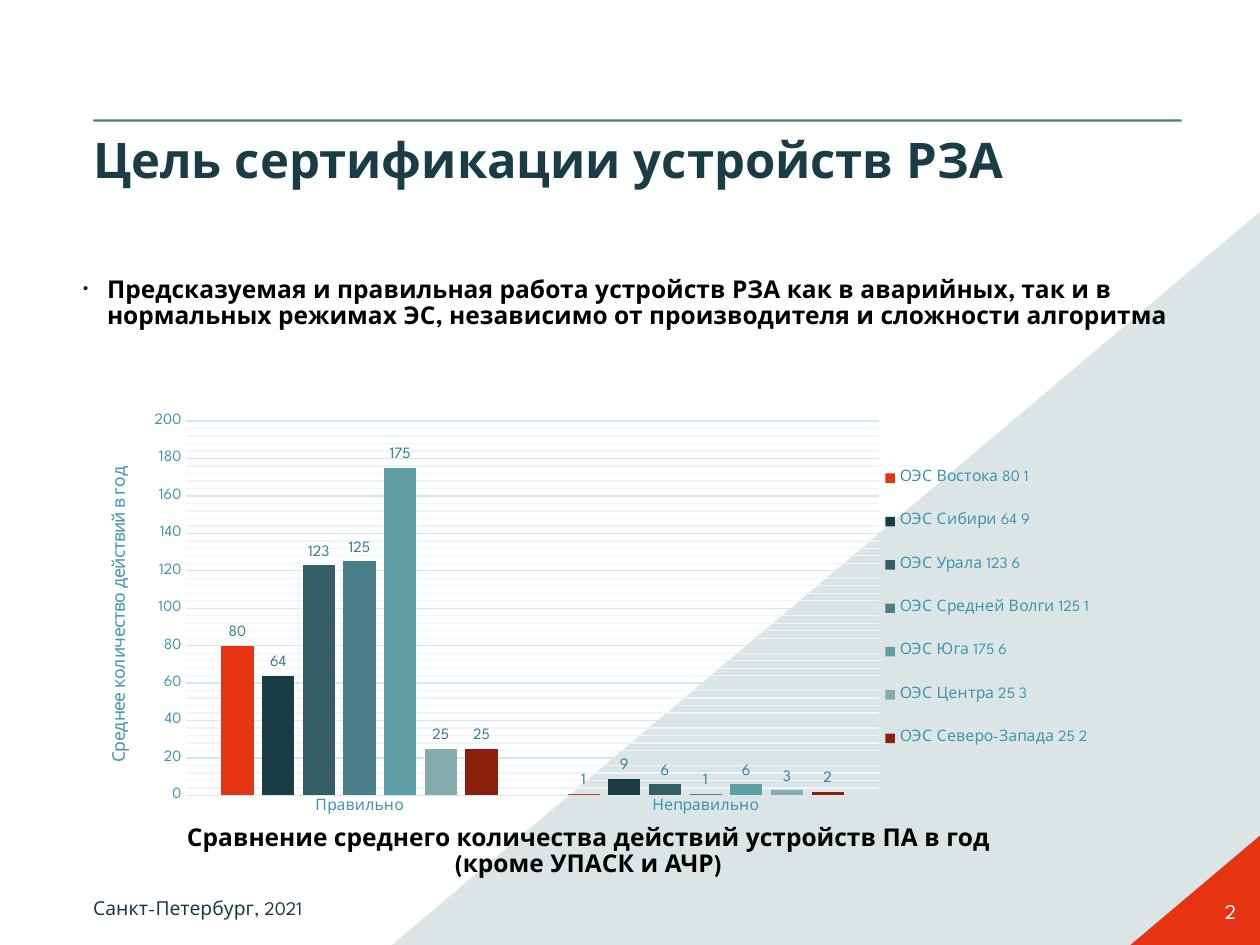
from lxml import etree
from pptx import Presentation
from pptx import util as u
from pptx.chart import data as chart_data
from pptx.dml.color import RGBColor
from pptx.enum import chart as ch, shapes, text
from pptx.oxml import ns

FONT = "League Spartan"
BLACK = RGBColor(0x00, 0x00, 0x00)
WHITE = RGBColor(0xFF, 0xFF, 0xFF)
NAVY = RGBColor(0x1A, 0x3C, 0x47)
TEAL = RGBColor(0x4B, 0x7F, 0x87)
RED = RGBColor(0xE6, 0x33, 0x12)
PALE = RGBColor(0xDC, 0xE5, 0xE5)
AXIS = RGBColor(0x41, 0x95, 0xB1)
LABEL = RGBColor(0x36, 0x7C, 0x93)
GRID = RGBColor(0xD2, 0xE7, 0xEE)
MINOR_GRID = RGBColor(0xED, 0xF5, 0xF8)

CATEGORIES = ["Правильно", "Неправильно"]
SERIES = [
    ("ОЭС Востока", 80, 1, RED),
    ("ОЭС Сибири", 64, 9, NAVY),
    ("ОЭС Урала", 123, 6, RGBColor(0x36, 0x5E, 0x67)),
    ("ОЭС Средней Волги", 125, 1, TEAL),
    ("ОЭС Юга", 175, 6, RGBColor(0x5E, 0x9F, 0xA5)),
    ("ОЭС Центра", 25, 3, RGBColor(0x86, 0xAB, 0xAD)),
    ("ОЭС Северо-Запада", 25, 2, RGBColor(0x8A, 0x1F, 0x0B)),
]


def points(*values):
    return [u.Pt(value) for value in values]


def style_font(font, size, color, bold=False):
    font.name, font.size, font.bold = FONT, u.Pt(size), bold
    font.color.rgb = color


def add_block(page, kind, place, color, flip=False):
    block = page.shapes.add_shape(kind, *points(*place))
    block.shadow.inherit = False
    block.fill.solid()
    block.fill.fore_color.rgb = color
    block.line.fill.background()
    if flip:
        block._element.spPr.xfrm.set("flipH", "1")


def fill_text(box, place, words, size, color, bold=False,
              align=text.PP_ALIGN.LEFT, spacing=0.9, anchor=text.MSO_ANCHOR.TOP):
    box.left, box.top, box.width, box.height = points(*place)
    frame = box.text_frame
    frame.margin_left = frame.margin_right = frame.margin_top = frame.margin_bottom = 0
    frame.word_wrap = True
    frame.auto_size = text.MSO_AUTO_SIZE.NONE
    frame.vertical_anchor = anchor
    para = frame.paragraphs[0]
    para.text = words
    para.alignment, para.line_spacing = align, spacing
    para.space_before = u.Pt(0)
    for span in para.runs:
        style_font(span.font, size, color, bold)
    return para


def add_text(page, place, *args, **options):
    box = page.shapes.add_textbox(*points(*place))
    return fill_text(box, place, *args, **options)


def add_bullet(para, indent):
    props = para._p.get_or_add_pPr()
    props.set("marL", str(u.Pt(indent)))
    props.set("indent", str(-u.Pt(indent)))
    for tag, name, value in (("buSzPct", "val", "60000"),
                             ("buFont", "typeface", "Arial"),
                             ("buChar", "char", "•")):
        etree.SubElement(props, ns.qn("a:" + tag)).set(name, value)


def set_layout(part, x, y, w, h, inner=False):
    """Place a chart part by fractions of the chart area."""
    layout = part.find(ns.qn("c:layout"))
    if layout is None:
        layout = etree.Element(ns.qn("c:layout"))
        part.insert(1 if part.tag == ns.qn("c:legend") else 0, layout)
    manual = etree.SubElement(layout, ns.qn("c:manualLayout"))
    values = [("layoutTarget", "inner")] if inner else []
    values += [("xMode", "edge"), ("yMode", "edge"),
               ("x", x), ("y", y), ("w", w), ("h", h)]
    for tag, value in values:
        etree.SubElement(manual, ns.qn("c:" + tag)).set("val", str(value))


def color_minor_gridlines(axis, color):
    axis.has_minor_gridlines = True
    node = axis._element.find(ns.qn("c:minorGridlines"))
    for tag in ("c:spPr", "a:ln", "a:solidFill", "a:srgbClr"):
        node = etree.SubElement(node, ns.qn(tag))
        if tag == "a:ln":
            node.set("w", str(u.Pt(0.75)))
    node.set("val", str(color))


def style_axes(chart):
    category, value = chart.category_axis, chart.value_axis
    for axis in (category, value):
        axis.major_tick_mark = axis.minor_tick_mark = ch.XL_TICK_MARK.NONE
        style_font(axis.tick_labels.font, 9, AXIS)
    value.has_major_gridlines = True
    for line in (category.format.line, value.major_gridlines.format.line):
        line.color.rgb = GRID
        line.width = u.Pt(0.75)
    color_minor_gridlines(value, MINOR_GRID)
    value.format.line.fill.background()
    value.minimum_scale, value.maximum_scale = 0, 200
    value.major_unit, value.minor_unit = 20, 4
    para = value.axis_title.text_frame.paragraphs[0]
    para.text = "Среднее количество действий в год"
    style_font(para.runs[0].font, 10, AXIS)


def add_column_chart(page, place):
    source = chart_data.CategoryChartData()
    source.categories = CATEGORIES
    for name, right, wrong, _ in SERIES:
        source.add_series(f"{name} {right} {wrong}", (right, wrong))
    chart = page.shapes.add_chart(
        ch.XL_CHART_TYPE.COLUMN_CLUSTERED, *points(*place), source).chart
    chart.has_title = False
    style_font(chart.font, 10, NAVY)
    style_axes(chart)

    # Columns and their value labels
    plot = chart.plots[0]
    plot.gap_width, plot.overlap, plot.vary_by_categories = 219, -27, False
    for series, (*_, color) in zip(plot.series, SERIES):
        series.format.fill.solid()
        series.format.fill.fore_color.rgb = color
        labels = series.data_labels
        labels.show_value = True
        labels.position = ch.XL_LABEL_POSITION.OUTSIDE_END
        style_font(labels.font, 9, LABEL)

    # Legend beside the plot area
    chart.has_legend = True
    legend = chart.legend
    legend.position = ch.XL_LEGEND_POSITION.RIGHT
    legend.include_in_layout = False
    style_font(legend.font, 9, AXIS)
    set_layout(legend._element, 0.75, 0.09, 0.25, 0.79)
    set_layout(chart._chartSpace.chart.plotArea, 0.1, 0.04, 0.67, 0.89, inner=True)


def main():
    deck = Presentation()
    deck.slide_width, deck.slide_height = points(720, 540)
    page = deck.slides.add_slide(deck.slide_layouts[5])

    # Corner triangles and the rule above the title
    triangle = shapes.MSO_SHAPE.RIGHT_TRIANGLE
    add_block(page, triangle, (224, 121, 496, 419), PALE, flip=True)
    add_block(page, triangle, (646, 477.5, 74, 62.5), RED, flip=True)
    add_block(page, shapes.MSO_SHAPE.RECTANGLE, (53.3, 68.2, 622, 1.3), TEAL)

    # Title and main statement
    fill_text(page.shapes.title, (53.3, 77.8, 570, 36.7),
              "Цель сертификации устройств РЗА", 28, NAVY, bold=True)
    statement = add_text(
        page, (47.5, 158.4, 643.7, 67),
        "Предсказуемая и правильная работа устройств РЗА как в аварийных, так и в "
        "нормальных режимах ЭС, независимо от производителя и сложности алгоритма",
        14, BLACK, bold=True)
    add_bullet(statement, 13.7)

    # Chart with its caption
    add_column_chart(page, (47.5, 231, 590.4, 240.5))
    add_text(page, (0, 471.6, 672.5, 58.3),
             "Сравнение среднего количества действий устройств ПА в год\v"
             "(кроме УПАСК и АЧР)",
             14, BLACK, bold=True, align=text.PP_ALIGN.CENTER)

    # Footer
    add_text(page, (53.3, 511.2, 244, 18.7), "Санкт-Петербург, 2021", 11, NAVY,
             spacing=u.Pt(14))
    add_text(page, (638, 511.2, 68.4, 18.7), "2", 12, WHITE, spacing=1.0,
             align=text.PP_ALIGN.RIGHT, anchor=text.MSO_ANCHOR.MIDDLE)

    deck.save("out.pptx")


if __name__ == "__main__":
    main()
